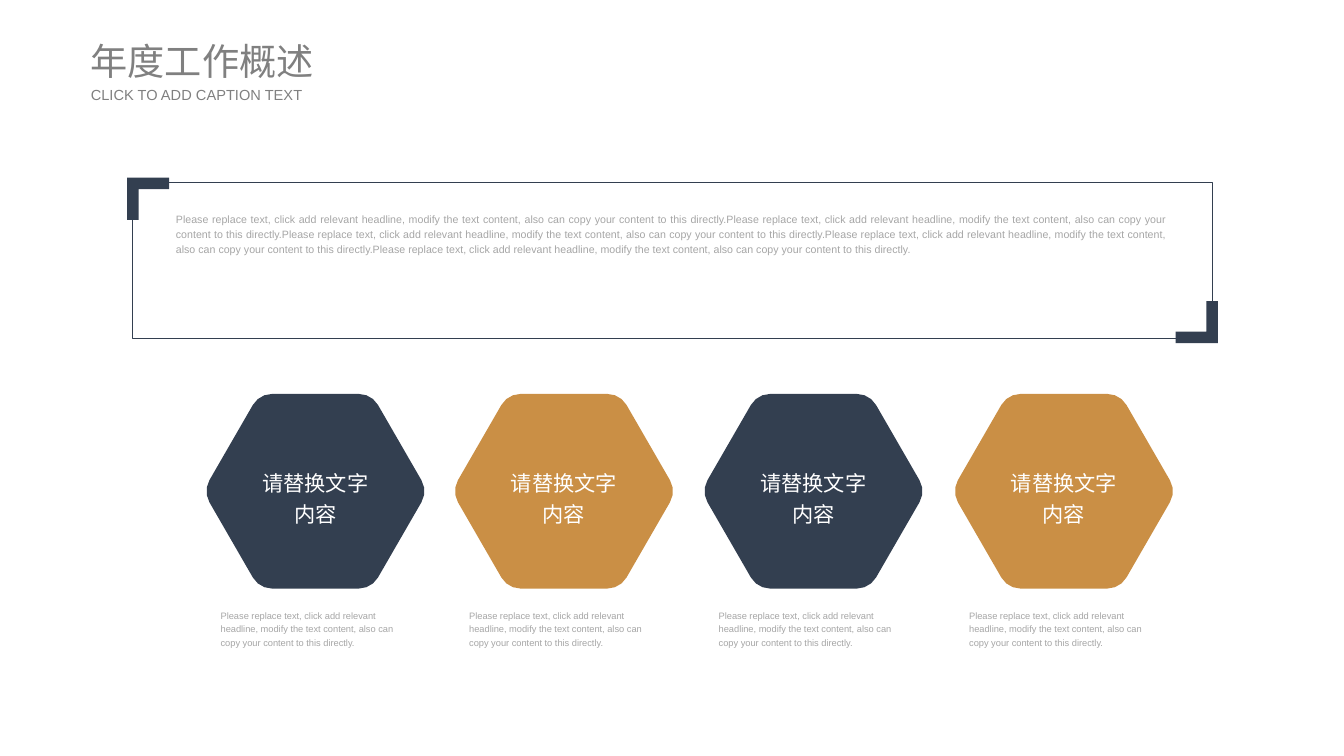
from math import cos, radians, sin

from pptx import Presentation
from pptx.dml.color import RGBColor
from pptx.enum.shapes import MSO_SHAPE
from pptx.enum.text import MSO_ANCHOR, MSO_AUTO_SIZE, PP_ALIGN
from pptx.util import Inches, Pt

LEFT, CENTER, JUSTIFY = PP_ALIGN.LEFT, PP_ALIGN.CENTER, PP_ALIGN.JUSTIFY
TOP, MIDDLE = MSO_ANCHOR.TOP, MSO_ANCHOR.MIDDLE
GROW = MSO_AUTO_SIZE.SHAPE_TO_FIT_TEXT
ROUND_RECT = MSO_SHAPE.ROUNDED_RECTANGLE

COLORS = {
    "navy": "333F50",
    "gold": "CA8F45",
    "white": "FFFFFF",
    "title": "808080",
    "body": "A6A6A6",
}
SENTENCE = (
    "Please replace text, click add relevant headline, modify the text content, "
    "also can copy your content to this directly."
)
HEXAGONS = [(2.17, "navy"), (4.77, "gold"), (7.38, "navy"), (10, "gold")]
HEXAGON_HALF_WIDTH, HEXAGON_CENTER_Y = 1.13, 5.14


class SlideBuilder:
    """Holds the font and the current slide, and adds styled elements."""

    font_name = "Arial"

    def __init__(self, slide):
        self.slide = slide

    def color(self, name):
        return RGBColor.from_string(COLORS[name])

    def frame(self, left, top, width, height, color):
        lengths = map(Inches, (left, top, width, height))
        shape = self.slide.shapes.add_shape(ROUND_RECT, *lengths)
        shape.adjustments[0] = 0
        shape.shadow.inherit = False
        shape.fill.background()
        shape.line.color.rgb = self.color(color)
        shape.line.width = Pt(0.25)

    def polygon(self, points, color):
        start, *others = [(Inches(x), Inches(y)) for x, y in points]
        builder = self.slide.shapes.build_freeform(*start)
        builder.add_line_segments(others, close=True)
        shape = builder.convert_to_shape()
        shape.shadow.inherit = False
        shape.fill.solid()
        shape.fill.fore_color.rgb = self.color(color)
        shape.line.fill.background()

    def bracket(self, x, y, direction, color):
        """Draw an L whose outer corner is at x, y; direction is 1 or -1."""
        arm, thick = 0.44, 0.12
        offsets = [(0, 0), (arm, 0), (arm, thick),
                   (thick, thick), (thick, arm), (0, arm)]
        self.polygon(
            [(x + direction * dx, y + direction * dy) for dx, dy in offsets], color
        )

    def rounded_hexagon(self, center_x, center_y, color):
        """Draw six corner arcs, each swept 30 degrees either side of its vertex."""
        arc_distance, arc_radius = 0.91, 0.23
        points = []
        for vertex in range(0, 360, 60):
            arc_x = center_x + arc_distance * cos(radians(vertex))
            arc_y = center_y + arc_distance * sin(radians(vertex))
            for angle in range(vertex - 30, vertex + 31, 20):
                points.append((arc_x + arc_radius * cos(radians(angle)),
                               arc_y + arc_radius * sin(radians(angle))))
        self.polygon(points, color)

    def text(self, words, left, top, width, height, size, color,
             align=LEFT, anchor=TOP, spacing=1.2, insets=(0, 0)):
        lengths = map(Inches, (left, top, width, height))
        box = self.slide.shapes.add_textbox(*lengths)
        side, edge = map(Inches, insets)
        frame_format = {
            "word_wrap": True,
            "auto_size": GROW,
            "vertical_anchor": anchor,
            "margin_left": side,
            "margin_right": side,
            "margin_top": edge,
            "margin_bottom": edge,
        }
        for name, value in frame_format.items():
            setattr(box.text_frame, name, value)
        para = box.text_frame.paragraphs[0]
        para.alignment = align
        para.line_spacing = spacing
        span = para.add_run()
        span.text = words
        for name, value in {"name": self.font_name, "size": Pt(size)}.items():
            setattr(span.font, name, value)
        span.font.color.rgb = self.color(color)


def main():
    deck = Presentation()
    deck.slide_width, deck.slide_height = Inches(14.06), Inches(7.91)
    page = SlideBuilder(deck.slides.add_slide(deck.slide_layouts[6]))

    page.frame(1.38, 1.91, 11.3, 1.63, "navy")
    page.text(SENTENCE * 5, 1.84, 2.2, 10.38, 0.47, 8, "body", align=JUSTIFY)
    page.bracket(1.33, 1.86, 1, "navy")
    page.bracket(12.74, 3.59, -1, "navy")

    for left, color in HEXAGONS:
        page.rounded_hexagon(left + HEXAGON_HALF_WIDTH, HEXAGON_CENTER_Y, color)
        page.text("请替换文字内容", left + 0.5, 4.87, 1.26, 0.62, 16, "white",
                  align=CENTER)
        page.text(SENTENCE, left + 0.04, 6.31, 2.18, 0.51, 7, "body",
                  insets=(0.1, 0.05))

    page.text("年度工作概述", 0.95, 0.39, 2.53, 0.49, 28, "title",
              anchor=MIDDLE, spacing=1.0)
    page.text("CLICK TO ADD CAPTION TEXT", 0.95, 0.9, 2.53, 0.19, 11, "title",
              anchor=MIDDLE, spacing=1.0)

    deck.save("out.pptx")


if __name__ == "__main__":
    main()
